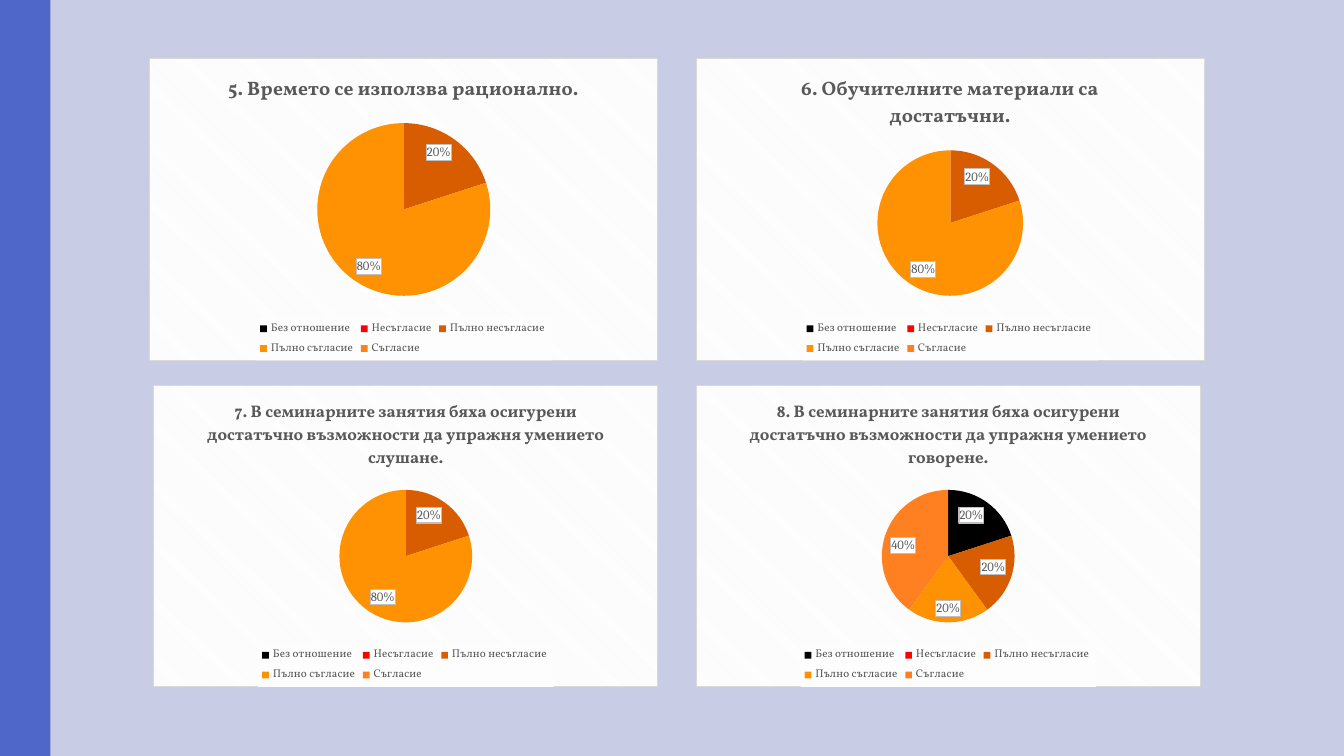
from lxml import etree
from pptx import Presentation
from pptx.chart.data import CategoryChartData
from pptx.dml.color import RGBColor
from pptx.enum.chart import XL_CHART_TYPE as ChartType
from pptx.enum.chart import XL_LABEL_POSITION as LabelPosition
from pptx.enum.chart import XL_LEGEND_POSITION as LegendPosition
from pptx.enum.shapes import MSO_SHAPE as Shape
from pptx.oxml import parse_xml
from pptx.oxml.ns import nsdecls, qn
from pptx.util import Inches, Pt

ANSWERS = ["Без отношение", "Несъгласие", "Пълно несъгласие ",
           "Пълно съгласие", "Съгласие "]
ANSWER_COLORS = ["000000", "FF0000", "D85C00", "FE9202", "FF8021"]
GREY = "595959"
MOSTLY_AGREE = (0, 0, 20, 80, 0)

# Left, top, width, title size, title, values
QUESTIONS = [
    (1.48, 0.58, 5.05, 14, "5. Времето се използва рационално.", MOSTLY_AGREE),
    (6.9, 0.58, 5.05, 14, "6. Обучителните материали са достатъчни.", MOSTLY_AGREE),
    (1.52, 3.82, 5.01, 12, "7. В семинарните занятия бяха осигурени достатъчно "
     "възможности да упражня умението слушане.", MOSTLY_AGREE),
    (6.9, 3.82, 5.01, 12, "8. В семинарните занятия бяха осигурени достатъчно "
     "възможности да упражня умението говорене.", (20, 0, 20, 20, 40)),
]
CHART_HEIGHT = 3


def color(value):
    return RGBColor.from_string(value)


def solid(value):
    return f'<a:solidFill><a:srgbClr val="{value}"/></a:solidFill>'


def set_font(font, name, size, value, bold=False):
    font.name, font.size, font.bold = name, Pt(size), bold
    font.color.rgb = color(value)


def set_box(element, fill, border=""):
    """Give a chart part a fill and border; its text format must already exist."""
    line = f'<a:ln w="9525">{border or "<a:noFill/>"}</a:ln>'
    box = parse_xml(f'<c:spPr {nsdecls("c", "a")}>{fill}{line}</c:spPr>')
    element.find(qn("c:txPr")).addprevious(box)


def add_background(slide, width, height):
    slide.background.fill.solid()
    slide.background.fill.fore_color.rgb = color("C8CDE5")
    band = slide.shapes.add_shape(Shape.RECTANGLE, 0, 0, width, height)
    band.shadow.inherit = False
    band.fill.solid()
    band.fill.fore_color.rgb = color("4E67C8")
    band.line.fill.background()


def format_title(chart, title, size):
    chart.has_title = True
    chart.chart_title.include_in_layout = False
    frame = chart.chart_title.text_frame
    frame.text = title
    set_font(frame.paragraphs[0].runs[0].font, "Vollkorn", size, GREY, bold=True)


def format_legend(chart):
    chart.has_legend = True
    legend = chart.legend
    legend.position = LegendPosition.BOTTOM
    legend.include_in_layout = False
    set_font(legend.font, "Vollkorn", 8, GREY)
    set_box(legend._element, solid("FDFDFD"))


def format_labels(series, values):
    labels = series.data_labels
    labels.show_percentage = True
    labels.show_value = False
    labels.number_format = "0%"
    labels.number_format_is_linked = False
    labels.position = LabelPosition.INSIDE_END
    set_font(labels.font, "Cambria", 9, GREY)
    set_box(labels._element, solid("FFFFFF"), solid("BFBFBF"))
    # Answers nobody chose carry no label
    empty = [index for index, value in enumerate(values) if not value]
    for place, index in enumerate(empty):
        label = etree.Element(qn("c:dLbl"))
        etree.SubElement(label, qn("c:idx")).set("val", str(index))
        etree.SubElement(label, qn("c:delete")).set("val", "1")
        labels._element.insert(place, label)


def add_question_chart(slide, left, top, width, size, title, values):
    data = CategoryChartData()
    data.categories = ANSWERS
    data.add_series("Series 1", values)
    chart = slide.shapes.add_chart(
        ChartType.PIE, Inches(left), Inches(top), Inches(width),
        Inches(CHART_HEIGHT), data).chart
    set_font(chart.font, "Cambria", 10, "FFFFFF")
    stripes = ('<a:pattFill prst="dkDnDiag">'
               '<a:fgClr><a:srgbClr val="F2F2F2"/></a:fgClr>'
               '<a:bgClr><a:srgbClr val="FFFFFF"/></a:bgClr></a:pattFill>')
    set_box(chart._chartSpace, stripes, solid("D9D9D9"))
    format_title(chart, title, size)
    format_legend(chart)

    # Slices
    plot = chart.plots[0]
    plot.vary_by_categories = True
    series = plot.series[0]
    for index, value in enumerate(ANSWER_COLORS):
        slice_format = series.points[index].format
        slice_format.fill.solid()
        slice_format.fill.fore_color.rgb = color(value)
        slice_format.line.fill.background()
    format_labels(series, values)


def main():
    deck = Presentation()
    deck.slide_width, deck.slide_height = Inches(13.33), Inches(7.5)
    slide = deck.slides.add_slide(deck.slide_layouts[6])
    add_background(slide, Inches(0.5), deck.slide_height)
    for question in QUESTIONS:
        add_question_chart(slide, *question)
    deck.save("out.pptx")


if __name__ == "__main__":
    main()
